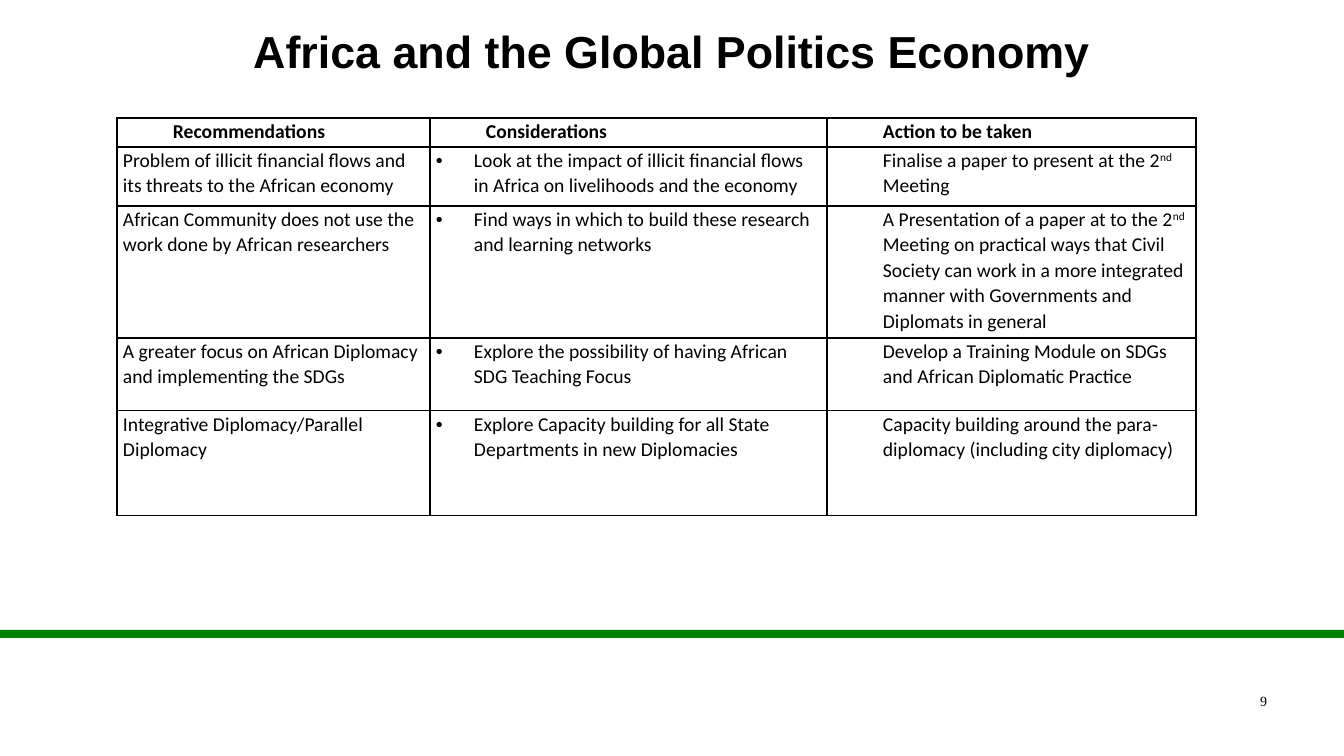
from lxml.etree import SubElement
from pptx import Presentation
from pptx.dml.color import RGBColor
from pptx.enum.shapes import MSO_SHAPE
from pptx.enum.text import MSO_ANCHOR, PP_ALIGN
from pptx.oxml.ns import qn
from pptx.util import Pt

PX = 914400 / 100.8
BLACK = RGBColor(0x00, 0x00, 0x00)
GREEN = RGBColor(0x00, 0x80, 0x00)


def px(*lengths):
    """Turn pixel lengths into a list of EMU values."""
    return [round(length * PX) for length in lengths]


def write_text(frame, text, font="Calibri", size=14, bold=False, align=None,
               spacing=None, margin=0, indent=0, bullet=None):
    """Fill a text frame with one paragraph; text between ^ marks is superscript."""
    frame.word_wrap = True
    paragraph = frame.paragraphs[0]
    properties = paragraph._p.get_or_add_pPr()
    if margin:
        left, first = px(margin, indent)
        properties.set("marL", str(left))
        properties.set("indent", str(first))
    if bullet:
        SubElement(properties, qn("a:buFont"), typeface="Arial")
        SubElement(properties, qn("a:buChar"), char=bullet)
    paragraph.alignment = align
    paragraph.line_spacing = spacing
    for index, part in enumerate(text.split("^")):
        run = paragraph.add_run()
        run.text = part
        run.font.name = font
        run.font.size = Pt(size)
        run.font.bold = bold
        run.font.color.rgb = BLACK
        if index % 2:
            run._r.get_or_add_rPr().set("baseline", "30000")


presentation = Presentation()
presentation.slide_width, presentation.slide_height = px(1344, 756)
slide = presentation.slides.add_slide(presentation.slide_layouts[5])

green_band = slide.shapes.add_shape(MSO_SHAPE.RECTANGLE, *px(0, 630, 1344, 8))
green_band.shadow.inherit = False
green_band.fill.solid()
green_band.fill.fore_color.rgb = GREEN
green_band.line.fill.background()

title = slide.shapes.title
title.left, title.top, title.width, title.height = px(67, 9, 1210, 84)
title.text_frame.vertical_anchor = MSO_ANCHOR.MIDDLE
write_text(title.text_frame, "Africa and the Global Politics Economy",
           font="Arial", size=32, bold=True, align=PP_ALIGN.CENTER)

ROWS = [
    ("Recommendations", "Considerations", "Action to be taken"),
    ("Problem of illicit financial flows and its threats to the African economy",
     "Look at the impact of illicit financial flows in Africa on livelihoods and the economy",
     "Finalise a paper to present at the 2^nd ^Meeting"),
    ("African Community does not use the work done by African researchers",
     "Find ways in which to build these research and learning networks",
     "A Presentation of a paper at to the 2^nd^ Meeting on practical ways that Civil Society "
     "can work in a more integrated manner with Governments and Diplomats in general"),
    ("A greater focus on African Diplomacy and implementing the SDGs",
     "Explore the possibility of having African SDG Teaching Focus",
     "Develop a Training Module on SDGs and African Diplomatic Practice"),
    ("Integrative Diplomacy/Parallel Diplomacy",
     "Explore Capacity building for all State Departments in new Diplomacies",
     "Capacity building around the para-diplomacy (including city diplomacy)"),
]
COLUMN_WIDTHS = px(313, 397, 369)
ROW_HEIGHTS = px(29, 59, 132, 73, 105)
HEADER_FORMAT = {"margin": 50, "bold": True}
BODY_FORMATS = [{}, {"margin": 38, "indent": -38, "bullet": "•"}, {"margin": 50}]

table = slide.shapes.add_table(len(ROWS), len(COLUMN_WIDTHS), *px(117, 118, 1079, 398)).table
table.first_row = False
table.horz_banding = False
for column, width in zip(table.columns, COLUMN_WIDTHS):
    column.width = width

for row_index, texts in enumerate(ROWS):
    table.rows[row_index].height = ROW_HEIGHTS[row_index]
    for column_index, text in enumerate(texts):
        cell = table.cell(row_index, column_index)
        cell.margin_left, cell.margin_right, cell.margin_top, cell.margin_bottom = px(6, 6, 0, 0)
        cell_properties = cell._tc.get_or_add_tcPr()
        for side in ("a:lnL", "a:lnR", "a:lnT", "a:lnB"):
            border = SubElement(cell_properties, qn(side), w=str(Pt(1)))
            border_fill = SubElement(border, qn("a:solidFill"))
            SubElement(border_fill, qn("a:srgbClr"), val=str(BLACK))
        cell.fill.background()
        cell_format = BODY_FORMATS[column_index] if row_index else HEADER_FORMAT
        write_text(cell.text_frame, text, spacing=1.07, **cell_format)

page_number = slide.shapes.add_textbox(*px(964, 688, 313, 52))
write_text(page_number.text_frame, "9", font="Times New Roman", size=10, align=PP_ALIGN.RIGHT)

presentation.save("out.pptx")
